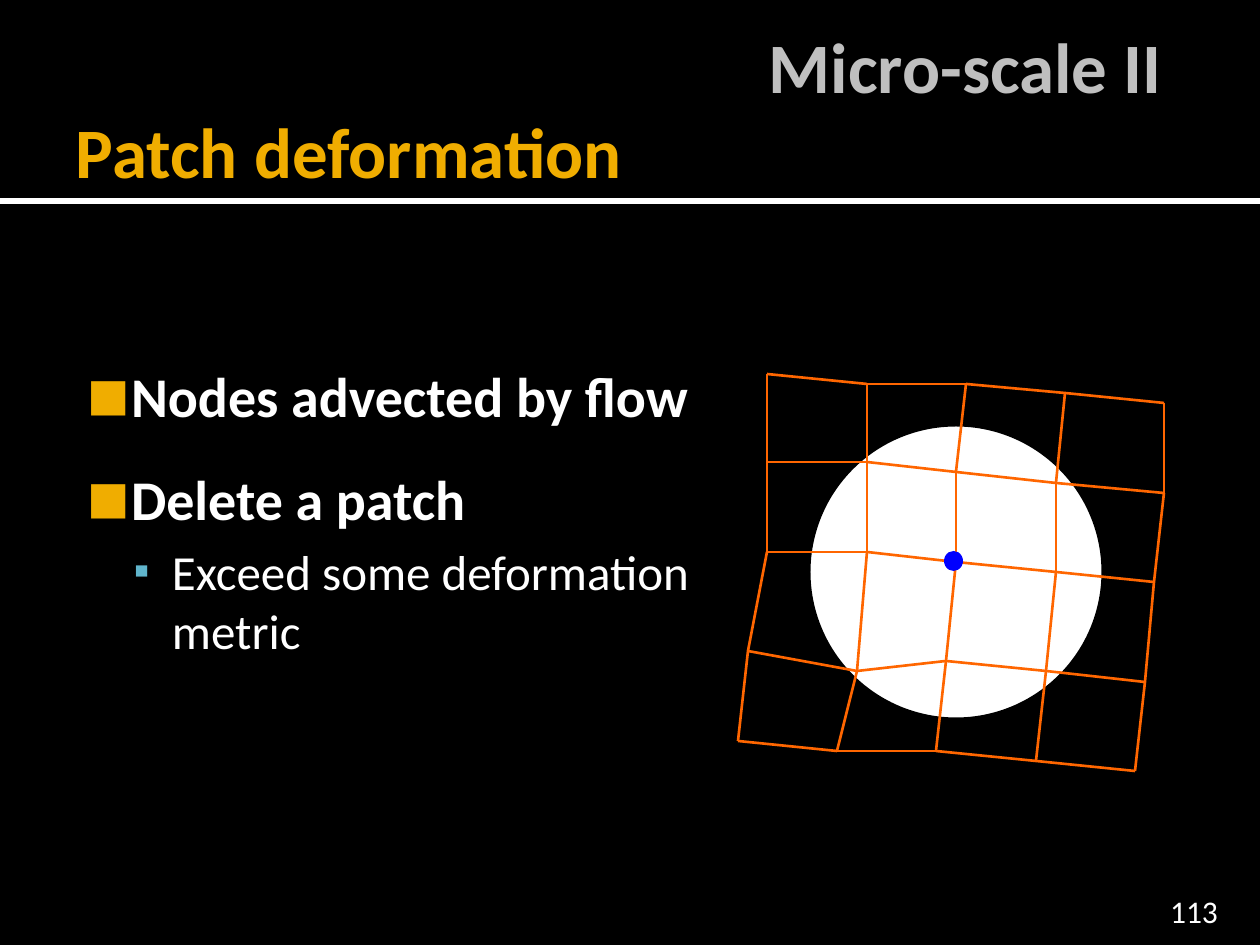
"""Build the patch deformation slide."""
import pptx
import pptx.util
import pptx.dml.color
import pptx.enum.shapes
import pptx.enum.text
import pptx.oxml.ns
from lxml import etree

SCALE = 914400 / 126
SHAPE = pptx.enum.shapes.MSO_SHAPE
ALIGN = pptx.enum.text.PP_ALIGN
ANCHOR = pptx.enum.text.MSO_ANCHOR
WHITE, BLACK, GOLD, GRAY = "FFFFFF", "000000", "F0AD00", "BFBFBF"
TEAL, ORANGE, BLUE = "60B5CC", "FF6600", "0000FF"


def emu(px):
    return pptx.util.Emu(round(px * SCALE))


def color(code):
    return pptx.dml.color.RGBColor.from_string(code)


def node(root, tag, **attrs):
    return etree.SubElement(root, pptx.oxml.ns.qn(tag), **attrs)


class Deck:
    def __init__(self, wide, high, font):
        self.show = pptx.Presentation()
        self.show.slide_width, self.show.slide_height = emu(wide), emu(high)
        self.font = font

    def page(self, back):
        self.slide = self.show.slides.add_slide(self.show.slide_layouts[6])
        self.slide.background.fill.solid()
        self.slide.background.fill.fore_color.rgb = color(back)

    def shape(self, kind, box, fill, edge=None, width=0):
        item = self.slide.shapes.add_shape(kind, *map(emu, box))
        item.shadow.inherit = False
        item.fill.solid()
        item.fill.fore_color.rgb = color(fill)
        if edge:
            item.line.color.rgb = color(edge)
            item.line.width = pptx.util.Pt(width)
        else:
            item.line.fill.background()

    def line(self, start, end, tint, width):
        item = self.slide.shapes.add_connector(
            pptx.enum.shapes.MSO_CONNECTOR.STRAIGHT, *map(emu, start + end))
        item.line.color.rgb = color(tint)
        item.line.width = pptx.util.Pt(width)
        node(item._element.spPr, "a:effectLst")

    def text(self, box, inset, anchor=ANCHOR.TOP):
        frame = self.slide.shapes.add_textbox(*map(emu, box)).text_frame
        frame.word_wrap = True
        frame.vertical_anchor = anchor
        (frame.margin_left, frame.margin_top,
         frame.margin_right, frame.margin_bottom) = map(emu, inset)
        return frame

    def para(self, frame, words, size, tint, bold=False, align=ALIGN.LEFT,
             before=0, left=0, hang=0, mark=None):
        first = frame.paragraphs[0]
        para = frame.add_paragraph() if first.runs else first
        para.alignment = align
        para.space_before = pptx.util.Pt(before)
        props = para._p.get_or_add_pPr()
        props.set("marL", str(emu(left)))
        props.set("indent", str(-emu(hang)))
        if mark:
            char, hue, share = mark
            node(node(props, "a:buClr"), "a:srgbClr", val=hue)
            node(props, "a:buSzPct", val=str(share * 1000))
            node(props, "a:buFont", typeface=self.font)
            node(props, "a:buChar", char=char)
        run = para.add_run()
        run.text = words
        run.font.name = self.font
        run.font.size = pptx.util.Pt(size)
        run.font.bold = bold
        run.font.color.rgb = color(tint)


def main():
    deck = Deck(1260, 945, "Calibri")
    deck.page(BLACK)
    deck.shape(SHAPE.RECTANGLE, (0, 198, 1260, 6), WHITE)
    deck.shape(SHAPE.RECTANGLE, (0, 0, 1260, 198), BLACK)
    deck.shape(SHAPE.OVAL, (807, 423, 298, 298), WHITE, BLACK, 4)

    body = deck.text((63, 349, 714, 533), (8, 13, 13, 6))
    main_mark, sub_mark = ("■", GOLD, 80), ("▪", TEAL, 90)
    deck.para(body, "Nodes advected by flow", 32, WHITE, True,
              left=60, hang=44, mark=main_mark)
    deck.para(body, "Delete a patch", 32, WHITE, True,
              before=20, left=60, hang=44, mark=main_mark)
    deck.para(body, "Exceed some deformation metric", 28, WHITE,
              before=5.6, left=101, hang=38, mark=sub_mark)

    mesh = [
        [(767, 374), (867, 384), (966, 384), (1065, 393), (1164, 403)],
        [(767, 462), (867, 462), (956, 472), (1056, 483), (1164, 493)],
        [(767, 552), (867, 552), (956, 562), (1056, 572), (1154, 582)],
        [(748, 651), (857, 671), (946, 661), (1046, 671), (1145, 682)],
        [(738, 741), (837, 751), (936, 751), (1036, 761), (1135, 771)],
    ]
    for chain in mesh + list(zip(*mesh)):
        for start, end in zip(chain, chain[1:]):
            deck.line(start, end, ORANGE, 1.5)
    deck.shape(SHAPE.OVAL, (944, 551, 19, 20), BLUE)

    title = deck.text((63, 21, 1134, 173), (13, 6, 6, 6), ANCHOR.MIDDLE)
    deck.para(title, "Micro-scale II", 40.5, GRAY, True, left=693)
    deck.para(title, "Patch deformation", 40.5, GOLD, True)

    count = deck.text((1130, 892, 101, 38), (13, 6, 13, 0), ANCHOR.BOTTOM)
    deck.para(count, "113", 18, WHITE, align=ALIGN.RIGHT)
    deck.show.save("out.pptx")


if __name__ == "__main__":
    main()
